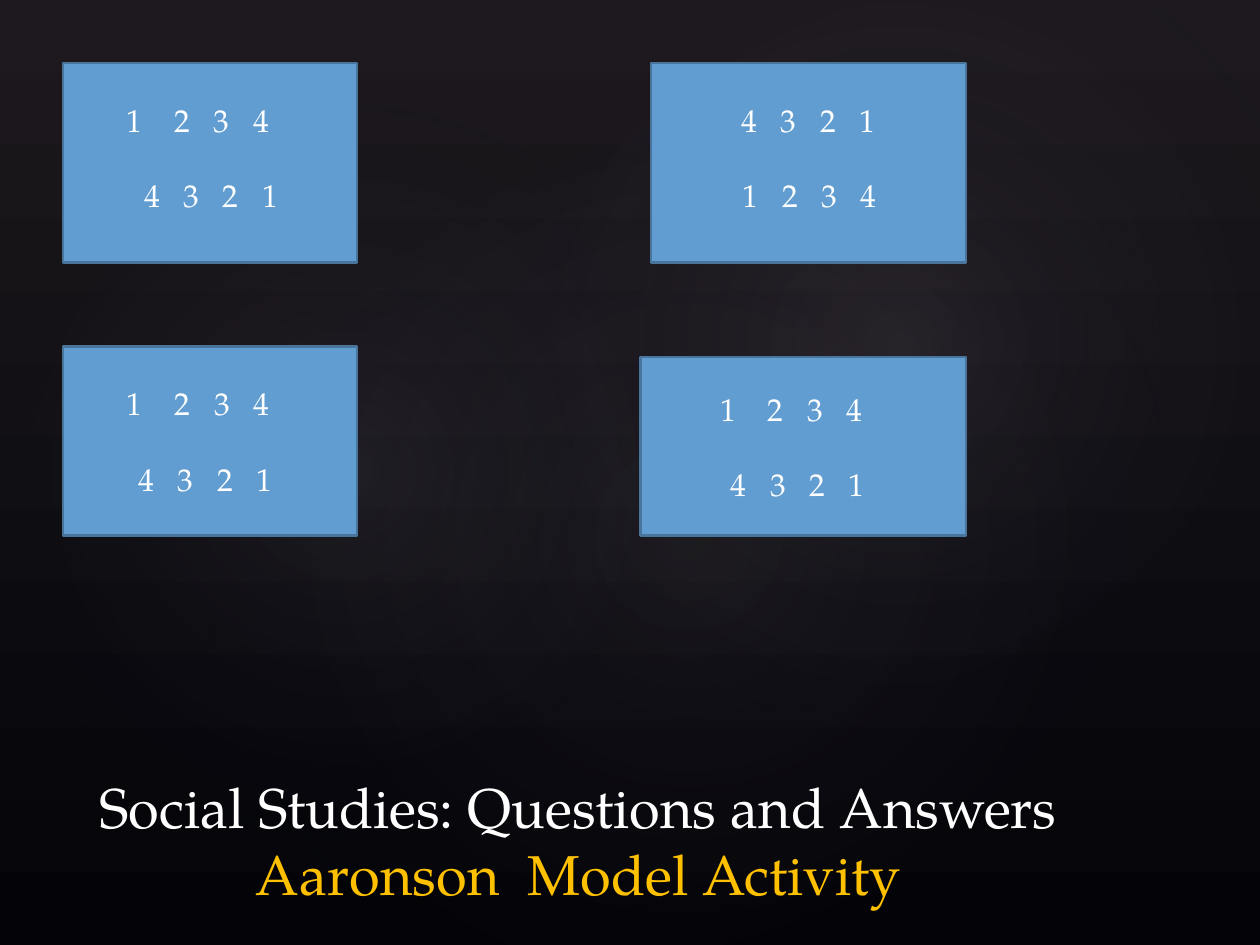
from dataclasses import dataclass
from typing import Optional

from lxml import etree
from pptx import Presentation
from pptx.dml.color import RGBColor
from pptx.enum.shapes import MSO_SHAPE
from pptx.enum.text import MSO_ANCHOR, MSO_AUTO_SIZE, PP_ALIGN
from pptx.oxml import parse_xml
from pptx.oxml.ns import qn
from pptx.util import Emu, Inches, Pt

RECT, OVAL = MSO_SHAPE.RECTANGLE, MSO_SHAPE.OVAL
LEFT, CENTER = PP_ALIGN.LEFT, PP_ALIGN.CENTER
TOP, MIDDLE, BOTTOM = MSO_ANCHOR.TOP, MSO_ANCHOR.MIDDLE, MSO_ANCHOR.BOTTOM
NS = "http://schemas.openxmlformats.org/drawingml/2006/main"
FONT = "TeX Gyre Pagella"
HEX = {"sky": "1D191E", "ground": "040408", "glow": "C4BCC6", "fade": "242852",
       "card": "629DD1", "edge": "49749B", "text": "FFFFFF", "gold": "FFC000"}
CELL = Inches(1) // 12  # the slide is 120 columns by 90 rows
HANG, TAIL = 0.38, 0.19  # inches: number indent, room after the last digit
UP, DOWN = "1   2   3   4", "4   3   2   1"


@dataclass
class Box:
    col: float
    row: float
    cols: float
    rows: float

    def place(self) -> list[Emu]:
        return [Emu(round(n * CELL)) for n in (self.col, self.row, self.cols, self.rows)]


@dataclass
class Glow:
    box: Box
    turn: float
    alpha: int


@dataclass
class Card:
    box: Box
    first: str
    second: str
    indent: float
    label: Optional[Box] = None  # text box laid over the card


GLOWS = [
    Glow(Box(18, 13.7, 95, 74.9), 328.7, 7),
    Glow(Box(-3.6, 15.4, 72.7, 58.8), 294.3, 8),
    Glow(Box(43, 1.6, 85.1, 62.4), 328.7, 8),
]
CARDS = [
    Card(Box(6, 6, 28, 19), UP, DOWN, 0.38, Box(8, 9, 24, 15.7)),
    Card(Box(6, 33, 28, 18), UP, DOWN, 0.5),
    Card(Box(62, 6, 30, 19), DOWN, UP, 0.38, Box(65, 9, 24, 19.4)),
    Card(Box(61, 34, 31, 17), UP, DOWN, 0.62),
]
TITLE = Box(1, 71, 108.2, 16)


def rgb(name: str) -> RGBColor:
    return RGBColor.from_string(HEX[name])


def write(par, text: str, size: int = 18, color: str = "text", align=CENTER,
          indent: float = 0, before: float = 0) -> None:
    par.alignment = align
    if before:
        par.space_before = Pt(before)
    if indent:
        par._p.get_or_add_pPr().set("marL", str(Inches(indent)))
    run = par.add_run()
    run.text = text
    run.font.name, run.font.size = FONT, Pt(size)
    run.font.color.rgb = rgb(color)


def number(par) -> None:
    """Number the paragraph, with a hanging indent."""
    props = par._p.get_or_add_pPr()
    for key, val in (("marL", HANG), ("marR", TAIL), ("indent", -HANG)):
        props.set(key, str(Inches(val)))
    etree.SubElement(props, qn("a:buFont"), typeface="+mj-lt")
    etree.SubElement(props, qn("a:buAutoNum"), type="arabicPlain")


def paint(slide) -> None:
    fill = slide.background.fill
    fill.gradient()
    fill.gradient_angle = 270
    for stop, name in zip(fill.gradient_stops, ("sky", "ground")):
        stop.color.rgb = rgb(name)


def shine(slide, glow: Glow) -> None:
    """Draw a soft round light that fades to nothing."""
    oval = slide.shapes.add_shape(OVAL, *glow.box.place())
    oval.rotation = glow.turn
    oval.shadow.inherit = False
    oval.line.fill.background()
    stops = "".join(
        f'<a:gs pos="{pos}000"><a:srgbClr val="{HEX[name]}">'
        f'<a:alpha val="{alpha}000"/></a:srgbClr></a:gs>'
        for pos, name, alpha in ((0, "glow", glow.alpha), (58, "fade", 0)))
    grad = parse_xml(
        f'<a:gradFill xmlns:a="{NS}"><a:gsLst>{stops}</a:gsLst><a:path path="circle">'
        '<a:fillToRect l="50000" t="50000" r="50000" b="50000"/></a:path></a:gradFill>')
    oval._element.spPr.find(qn("a:prstGeom")).addnext(grad)


def deal(slide, card: Card) -> None:
    """Draw a card and its two rows of digits."""
    rect = slide.shapes.add_shape(RECT, *card.box.place())
    rect.shadow.inherit = False
    rect.fill.solid()
    rect.fill.fore_color.rgb = rgb("card")
    rect.line.color.rgb = rgb("edge")
    rect.line.width = Pt(1.5)
    host = slide.shapes.add_textbox(*card.label.place()) if card.label else rect
    frame = host.text_frame
    frame.word_wrap = True
    frame.vertical_anchor = TOP if card.label else MIDDLE
    head = frame.paragraphs[0]
    if card.first == UP:
        number(head)
        write(head, card.first.removeprefix("1").lstrip())
    else:
        write(head, card.first)
    write(frame.add_paragraph(), card.second, align=LEFT, indent=card.indent, before=21.6)


def name(slide) -> None:
    """Fill the title and bring it in front of the lights."""
    title = slide.shapes.title
    title.left, title.top, title.width, title.height = TITLE.place()
    frame = title.text_frame
    frame.word_wrap = True
    frame.auto_size = MSO_AUTO_SIZE.NONE
    frame.vertical_anchor = BOTTOM
    par = frame.paragraphs[0]
    write(par, "Social Studies: Questions and Answers ", size=32)
    write(par, "Aaronson  Model Activity", size=32, color="gold")
    slide.shapes._spTree.append(title._element)


def main() -> None:
    deck = Presentation()
    deck.slide_width, deck.slide_height = 120 * CELL, 90 * CELL
    slide = deck.slides.add_slide(deck.slide_layouts[5])
    paint(slide)
    for glow in GLOWS:
        shine(slide, glow)
    name(slide)
    for card in CARDS:
        deal(slide, card)
    deck.save("out.pptx")


if __name__ == "__main__":
    main()
